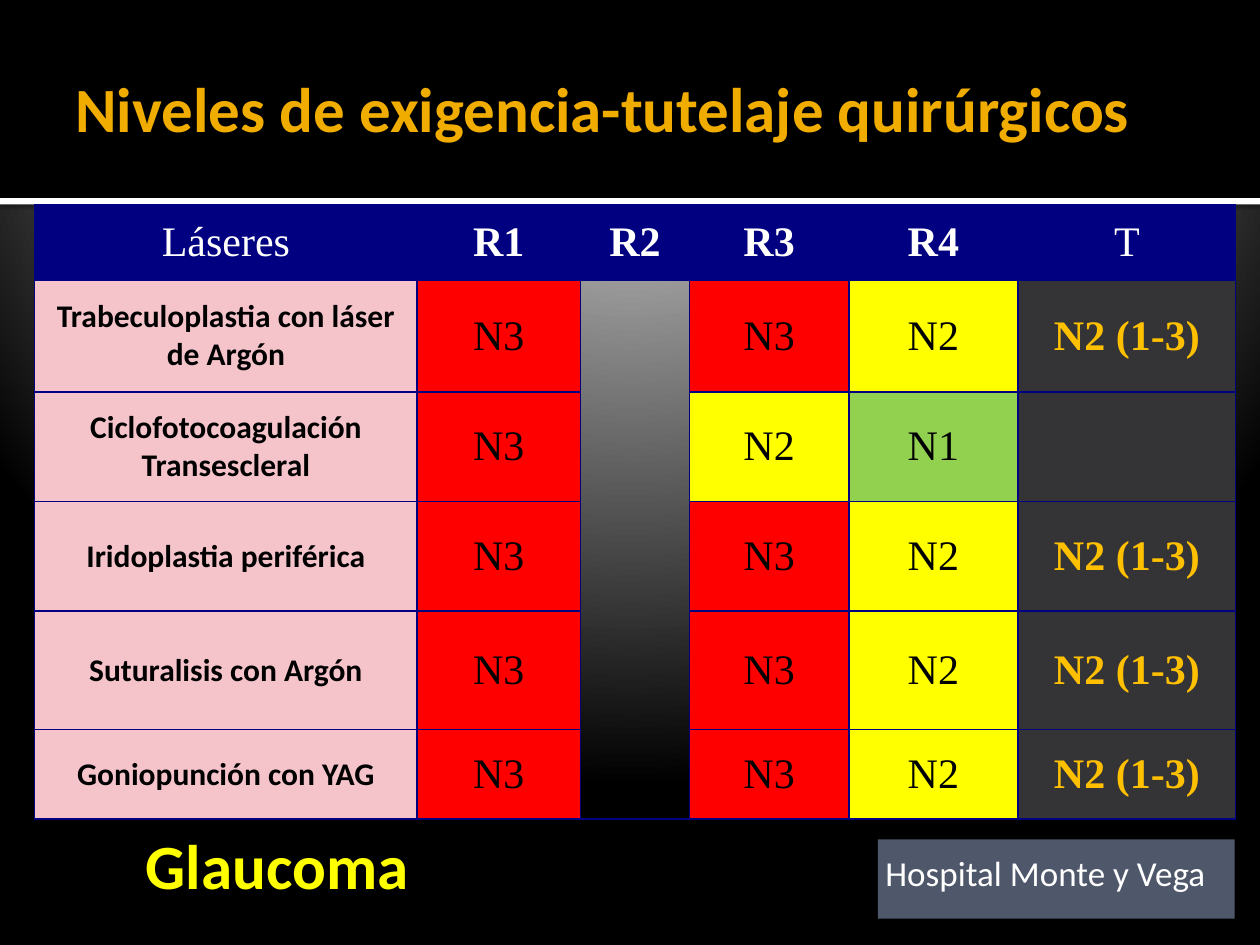
"""Build the glaucoma laser slide with its table of surgical supervision levels."""
from pptx import Presentation
from pptx.dml.color import RGBColor
from pptx.enum.shapes import MSO_SHAPE
from pptx.enum.text import MSO_ANCHOR, PP_ALIGN
from pptx.oxml import parse_xml
from pptx.util import Cm, Pt

RECTANGLE = MSO_SHAPE.RECTANGLE
TOP, MIDDLE = MSO_ANCHOR.TOP, MSO_ANCHOR.MIDDLE
LEFT, CENTER = PP_ALIGN.LEFT, PP_ALIGN.CENTER
NAMESPACES = (
    'xmlns:a="http://schemas.openxmlformats.org/drawingml/2006/main" '
    'xmlns:p="http://schemas.openxmlformats.org/presentationml/2006/main"'
)
NO_STYLE = "{2D5ABB26-0587-4C30-8999-92F81FD0307C}"
NAVY, WHITE, BLACK, YELLOW = "000080", "FFFFFF", "000000", "FFFF00"
PINK, CHARCOAL, AMBER = "F5C4CB", "343437", "FFC000"
LEVEL_FILLS = {"N1": "92D050", "N2": YELLOW, "N3": "FF0000"}


def color(value):
    return RGBColor.from_string(value)


def add_text(frame, text, size, font_color, bold, font="Calibri", align=LEFT):
    frame.word_wrap = True
    paragraph = frame.paragraphs[0]
    paragraph.alignment = align
    run = paragraph.add_run()
    run.text = text
    run.font.name = font
    run.font.size = Pt(size)
    run.font.bold = bold
    run.font.color.rgb = color(font_color)


presentation = Presentation()
presentation.slide_width = Cm(25.4)
presentation.slide_height = Cm(19.05)
slide = presentation.slides.add_slide(presentation.slide_layouts[6])

stops = "".join(
    f'<a:gs pos="{position * 1000}"><a:srgbClr val="{value}"/></a:gs>'
    for position, value in [(0, "C0C0C0"), (12, "C0C0C0"), (20, "BEBEBE"), (100, BLACK)]
)
background = parse_xml(
    f'<p:bg {NAMESPACES}><p:bgPr><a:gradFill rotWithShape="1"><a:gsLst>{stops}</a:gsLst>'
    '<a:path path="circle"><a:fillToRect l="10000" t="-25000" r="10000" b="125000"/></a:path>'
    '</a:gradFill><a:effectLst/></p:bgPr></p:bg>'
)
slide.element.cSld.insert(0, background)

rectangles = {}
for name, left, top, width, height, fill in [
    ("rule", 0, 3.99, 25.4, 0.13, WHITE),
    ("header", 0, 0, 25.4, 3.99, BLACK),
    ("hospital", 17.7, 16.92, 7.19, 1.6, "4F576A"),
]:
    shape = slide.shapes.add_shape(RECTANGLE, Cm(left), Cm(top), Cm(width), Cm(height))
    shape.shadow.inherit = False
    shape.fill.solid()
    shape.fill.fore_color.rgb = color(fill)
    shape.line.fill.background()
    rectangles[name] = shape

rule_properties = rectangles["rule"].element.spPr
rule_properties.remove(rule_properties[-1])
rule_properties.append(parse_xml(
    f'<a:effectLst {NAMESPACES}><a:outerShdw blurRad="{Pt(2.5)}" dist="{Pt(0.8)}" dir="5400000">'
    f'<a:srgbClr val="{BLACK}"><a:alpha val="60000"/></a:srgbClr></a:outerShdw></a:effectLst>'
))

for text, left, top, width, height, anchor, font_color in [
    ("Niveles de exigencia-tutelaje quirúrgicos", 1.27, 0.43, 22.86, 3.48, MIDDLE, "F0AD00"),
    ("Glaucoma", 2.69, 16.54, 10.59, 1.8, TOP, YELLOW),
]:
    text_box = slide.shapes.add_textbox(Cm(left), Cm(top), Cm(width), Cm(height))
    text_box.text_frame.vertical_anchor = anchor
    add_text(text_box.text_frame, text, 36, font_color, True)

hospital_frame = rectangles["hospital"].text_frame
hospital_frame.vertical_anchor = TOP
hospital_frame.margin_left = Cm(0.15)
hospital_frame.margin_top = Cm(0.25)
add_text(hospital_frame, "Hospital Monte y Vega", 20, WHITE, False)

column_widths = [7.71, 3.29, 2.2, 3.21, 3.41, 4.39]
row_heights = [1.52, 2.26, 2.21, 2.21, 2.39, 1.8]
rows = [
    ["Láseres", "R1", "R2", "R3", "R4", "T"],
    ["Trabeculoplastia con láser de Argón", "N3", "", "N3", "N2", "N2 (1-3)"],
    ["Ciclofotocoagulación Transescleral", "N3", "", "N2", "N1", ""],
    ["Iridoplastia periférica", "N3", "", "N3", "N2", "N2 (1-3)"],
    ["Suturalisis con Argón", "N3", "", "N3", "N2", "N2 (1-3)"],
    ["Goniopunción con YAG", "N3", "", "N3", "N2", "N2 (1-3)"],
]
table = slide.shapes.add_table(
    len(rows), len(column_widths), Cm(0.7), Cm(4.12), Cm(sum(column_widths)), Cm(sum(row_heights))
).table
table.first_row = table.horz_banding = False
table._tbl.tblPr[0].text = NO_STYLE
for column, width in zip(table.columns, column_widths):
    column.width = Cm(width)
for row, height in zip(table.rows, row_heights):
    row.height = Cm(height)
table.cell(1, 2).merge(table.cell(5, 2))

for row_index, row_texts in enumerate(rows):
    for column_index, text in enumerate(row_texts):
        cell = table.cell(row_index, column_index)
        cell.vertical_anchor = MIDDLE
        cell.margin_left = cell.margin_right = Cm(0.18)
        cell.margin_top = cell.margin_bottom = 0
        size, font = 24, "Times New Roman"
        if row_index == 0:
            fill, font_color, bold = NAVY, WHITE, text.startswith("R")
        elif column_index == 0:
            fill, font_color, bold = PINK, BLACK, True
            size, font = 18, "Calibri"
        elif column_index == 5:
            fill, font_color, bold = CHARCOAL, AMBER, True
        else:
            fill, font_color, bold = LEVEL_FILLS.get(text), BLACK, False
        if fill:
            cell.fill.solid()
            cell.fill.fore_color.rgb = color(fill)
        else:
            cell.fill.background()
        if text:
            add_text(cell.text_frame, text, size, font_color, bold, font, CENTER)
        cell_properties = cell._tc.get_or_add_tcPr()
        for position, side in enumerate(["lnL", "lnR", "lnT", "lnB"]):
            cell_properties.insert(position, parse_xml(
                f'<a:{side} {NAMESPACES} w="{Pt(1)}"><a:solidFill>'
                f'<a:srgbClr val="{NAVY}"/></a:solidFill></a:{side}>'
            ))

presentation.save("out.pptx")
